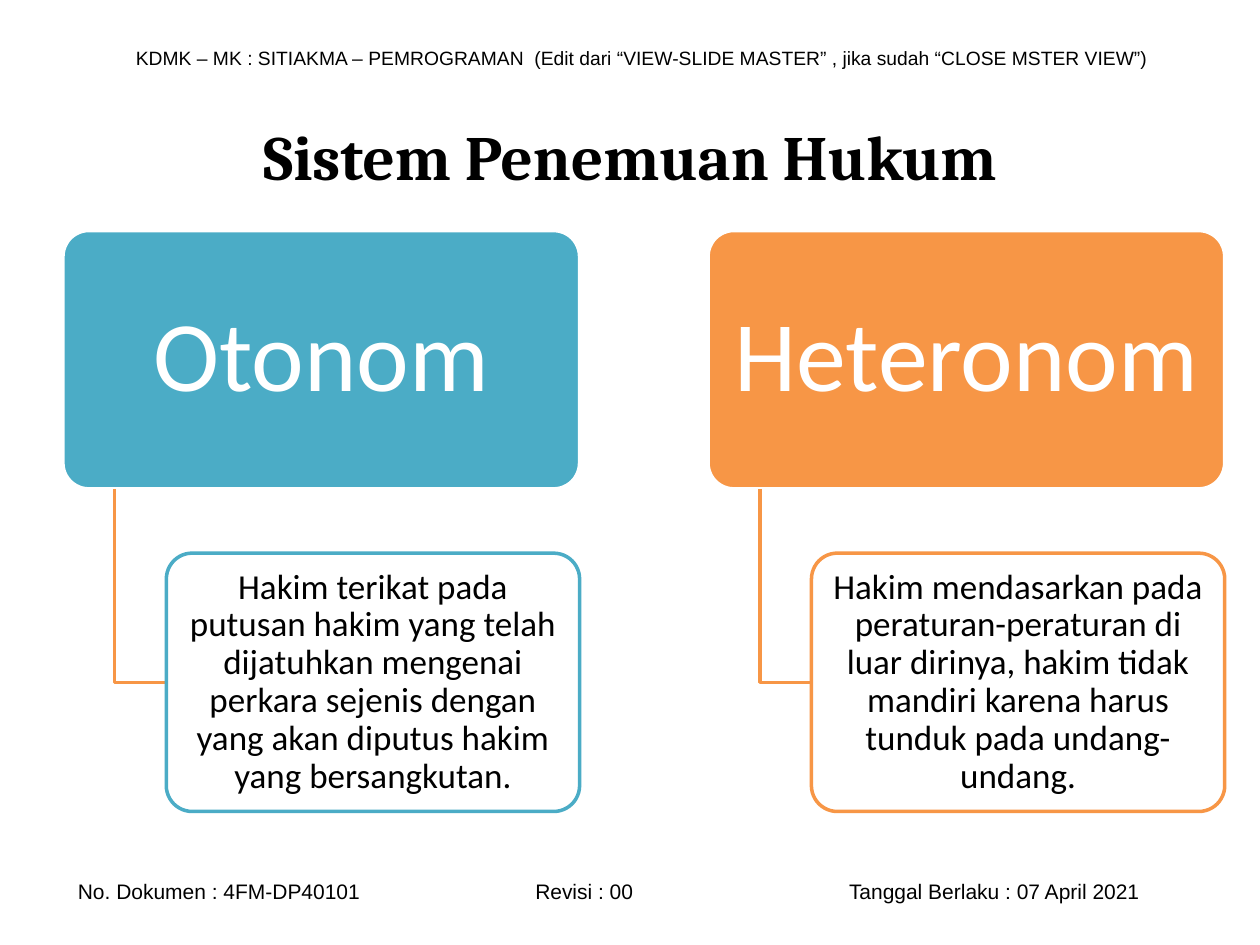
from pptx import Presentation
from pptx.dml.color import RGBColor
from pptx.enum.shapes import MSO_SHAPE
from pptx.enum.text import MSO_ANCHOR, PP_ALIGN
from pptx.oxml.ns import qn
from pptx.util import Inches, Pt
from lxml.etree import SubElement

# Content
HEADER = ("KDMK – MK : SITIAKMA – PEMROGRAMAN  (Edit dari “VIEW-SLIDE MASTER” , "
          "jika sudah “CLOSE MSTER VIEW”)")
TITLE = "Sistem Penemuan Hukum"
FOOTER = ["No. Dokumen : 4FM-DP40101", "Revisi : 00",
          "Tanggal Berlaku : 07 April 2021"]
SYSTEMS = [
    ("Otonom", "teal",
     "Hakim terikat pada putusan hakim yang telah dijatuhkan mengenai "
     "perkara sejenis dengan yang akan diputus hakim yang bersangkutan."),
    ("Heteronom", "orange",
     "Hakim mendasarkan pada peraturan-peraturan di luar dirinya, hakim "
     "tidak mandiri karena harus tunduk pada undang-undang."),
]

# Theme: colours, and (font, size, bold) per role
THEME = {
    "black": RGBColor(0, 0, 0), "white": RGBColor(255, 255, 255),
    "teal": RGBColor(0x4B, 0xAC, 0xC6), "orange": RGBColor(0xF7, 0x96, 0x46),
    "header": ("Arial", 11, False), "footer": ("Arial", 12, False),
    "title": ("Cambria", 36, True), "head": ("Calibri", 57, False),
    "detail": ("Calibri", 20, False), "line": Pt(2),
}

# Layout in inches
LEFT, TOP, STEP = 0.5, 1.83, 5.12
HEAD_W, BOX_H, GAP = 4.1, 2.05, 0.51
STEM = HEAD_W / 10
INDENT = 2 * STEM
FOOT_TABS = [3.63, 6.12]

deck = Presentation()
deck.slide_width, deck.slide_height = Inches(10), Inches(7.5)
slide = deck.slides.add_slide(deck.slide_layouts[6])
shapes = slide.shapes


def write(shape, parts, role, color="black", align=PP_ALIGN.CENTER, tabs=()):
    frame = shape.text_frame
    frame.word_wrap = True
    frame.vertical_anchor = MSO_ANCHOR.MIDDLE
    para = frame.paragraphs[0]
    para.alignment = align
    if tabs:
        stops = SubElement(para._p.get_or_add_pPr(), qn("a:tabLst"))
        for pos in tabs:
            SubElement(stops, qn("a:tab"), pos=str(Inches(pos)), algn="l")
    for i, part in enumerate(parts):
        run = para.add_run()
        run.text = ("\t" if i else "") + part
        run.font.name, size, run.font.bold = THEME[role]
        run.font.size = Pt(size)
        run.font.color.rgb = THEME[color]
    return frame, para


def label(box, parts, role, **style):
    write(shapes.add_textbox(*map(Inches, box)), parts, role, **style)


def card(box, text, role, fill, line, color, pad):
    shape = shapes.add_shape(MSO_SHAPE.ROUNDED_RECTANGLE, *map(Inches, box))
    shape.adjustments[0] = 0.1
    shape.shadow.inherit = False
    shape.fill.solid()
    shape.fill.fore_color.rgb = THEME[fill]
    shape.line.color.rgb = THEME[line]
    shape.line.width = THEME["line"]
    frame, para = write(shape, [text], role, color)
    para.line_spacing = 0.9
    frame.margin_left = frame.margin_right = Inches(pad)
    frame.margin_top = frame.margin_bottom = Inches(pad * 2 / 3)
    return shape


def elbow(x, top, right, low):
    path = shapes.build_freeform(Inches(x), Inches(top))
    path.add_line_segments([(Inches(x), Inches(low)),
                            (Inches(right), Inches(low))], close=False)
    shape = path.convert_to_shape()
    shape.shadow.inherit = False
    shape.fill.background()
    shape.line.color.rgb = THEME["orange"]
    shape.line.width = THEME["line"]


# Header, footer and title
label((0.98, 0.31, 8.35, 0.29), [HEADER], "header", align=PP_ALIGN.LEFT)
label((0.52, 6.92, 9.13, 0.3), FOOTER, "footer",
      align=PP_ALIGN.LEFT, tabs=FOOT_TABS)
label((0.5, 0.61, 9, 1.25), [TITLE], "title")

# Each system: head card, elbow, detail card
for i, (name, hue, detail) in enumerate(SYSTEMS):
    x = LEFT + i * STEP
    base = TOP + BOX_H
    low = base + GAP
    card((x, TOP, HEAD_W, BOX_H), name, "head", hue, "white", "white", 0.12)
    elbow(x + STEM, base, x + INDENT, low + BOX_H / 2)
    box = card((x + INDENT, low, HEAD_W - INDENT, BOX_H), detail, "detail",
               "white", hue, "black", 0.04)
    tint = box.fill._xPr.find(qn("a:solidFill"))[0]
    SubElement(tint, qn("a:alpha"), val="90000")

deck.save("out.pptx")
